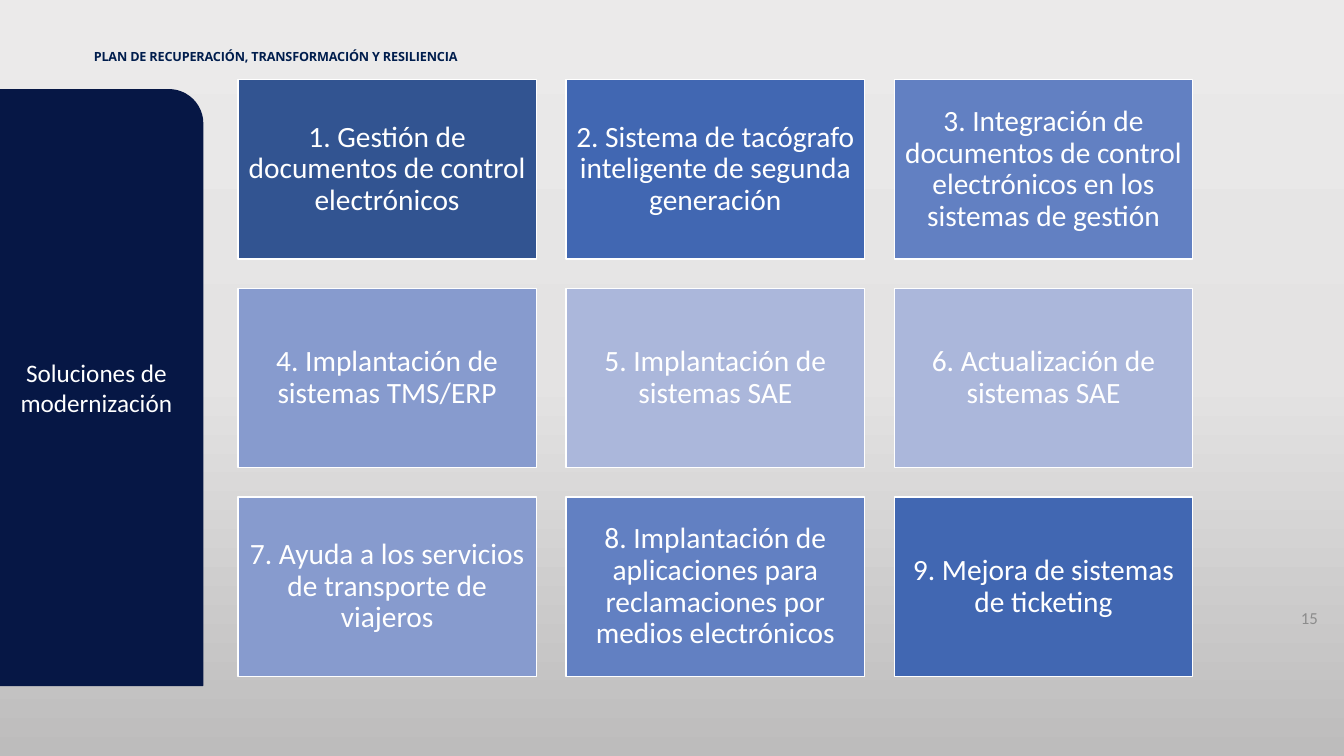
from copy import deepcopy

from pptx import Presentation
from pptx.dml.color import RGBColor
from pptx.enum.shapes import MSO_SHAPE
from pptx.enum.text import MSO_ANCHOR, MSO_AUTO_SIZE, PP_ALIGN
from pptx.oxml.ns import qn
from pptx.util import Inches, Pt

RECTANGLE = MSO_SHAPE.RECTANGLE
ROUND_CORNER = MSO_SHAPE.ROUND_1_RECTANGLE
LEFT, CENTER, RIGHT = PP_ALIGN.LEFT, PP_ALIGN.CENTER, PP_ALIGN.RIGHT
TOP, MIDDLE = MSO_ANCHOR.TOP, MSO_ANCHOR.MIDDLE
NO_AUTOFIT = MSO_AUTO_SIZE.NONE

WHITE = RGBColor(0xFF, 0xFF, 0xFF)
NAVY = RGBColor(0x06, 0x17, 0x45)
HEADER_BLUE = RGBColor(0x00, 0x1D, 0x4D)
NUMBER_GRAY = RGBColor(0x8C, 0x8C, 0x8C)
BLUE_1 = RGBColor(0x32, 0x54, 0x91)
BLUE_2 = RGBColor(0x41, 0x67, 0xB2)
BLUE_3 = RGBColor(0x62, 0x80, 0xC2)
BLUE_4 = RGBColor(0x87, 0x9B, 0xCE)
BLUE_5 = RGBColor(0xAB, 0xB7, 0xDB)
BACKGROUND_STOPS = [
    (0, RGBColor(0xEB, 0xEA, 0xEA)),
    (0.5, RGBColor(0xE4, 0xE3, 0xE3)),
    (1, RGBColor(0xBD, 0xBC, 0xBC)),
]

SOLUTIONS = [
    ("1. Gestión de documentos de control electrónicos", BLUE_1),
    ("2. Sistema de tacógrafo inteligente de segunda generación", BLUE_2),
    ("3. Integración de documentos de control electrónicos en los "
     "sistemas de gestión", BLUE_3),
    ("4. Implantación de sistemas TMS/ERP", BLUE_4),
    ("5. Implantación de sistemas SAE", BLUE_5),
    ("6. Actualización de sistemas SAE", BLUE_5),
    ("7. Ayuda a los servicios de transporte de viajeros", BLUE_4),
    ("8. Implantación de aplicaciones para reclamaciones por medios "
     "electrónicos", BLUE_3),
    ("9. Mejora de sistemas de ticketing", BLUE_2),
]
COLUMNS = 3
GRID_LEFT, GRID_TOP = 2.36, 0.79
TILE_WIDTH, TILE_HEIGHT = 2.96, 1.78
COLUMN_STEP, ROW_STEP = 3.255, 2.07


def set_background(slide):
    fill = slide.background.fill
    fill.gradient()
    fill.gradient_angle = 270
    stop_list = slide.element.find(".//" + qn("a:gsLst"))
    stop_list.append(deepcopy(stop_list[-1]))
    for stop, (position, color) in zip(fill.gradient_stops, BACKGROUND_STOPS):
        stop.position = position
        stop.color.rgb = color


def set_text(shape, text, size, color, alignment=CENTER, anchor=MIDDLE,
             font_name="Calibri", bold=False):
    frame = shape.text_frame
    frame.text = text
    frame.word_wrap = True
    frame.auto_size = NO_AUTOFIT
    frame.vertical_anchor = anchor
    paragraph = frame.paragraphs[0]
    paragraph.alignment = alignment
    font = paragraph.runs[0].font
    font.name = font_name
    font.size = Pt(size)
    font.bold = bold
    font.color.rgb = color
    return frame


def set_margins(frame, side, top, bottom):
    frame.margin_left = frame.margin_right = Inches(side)
    frame.margin_top, frame.margin_bottom = Inches(top), Inches(bottom)


def add_header(slide):
    title = slide.shapes.title
    title.left, title.top = Inches(0.92), Inches(0.48)
    title.width, title.height = Inches(4.41), Inches(0.17)
    frame = set_text(title, "PLAN DE RECUPERACIÓN, TRANSFORMACIÓN Y RESILIENCIA",
                     9, HEADER_BLUE, LEFT, TOP, "Open Sans", True)
    set_margins(frame, 0.01, 0.01, 0)
    # Slightly tightened letter spacing, in hundredths of a point
    frame.paragraphs[0].runs[0].font._element.set("spc", "-10")


def add_panel(slide, kind, left, top, width, height, fill, line, text, size):
    shape = slide.shapes.add_shape(
        kind, Inches(left), Inches(top), Inches(width), Inches(height))
    shape.shadow.inherit = False
    shape.fill.solid()
    shape.fill.fore_color.rgb = fill
    shape.line.color.rgb = line
    shape.line.width = Pt(1)
    return set_text(shape, text, size, WHITE)


def add_solution_grid(slide):
    for index, (text, color) in enumerate(SOLUTIONS):
        row, column = divmod(index, COLUMNS)
        frame = add_panel(
            slide, RECTANGLE,
            GRID_LEFT + column * COLUMN_STEP, GRID_TOP + row * ROW_STEP,
            TILE_WIDTH, TILE_HEIGHT, color, WHITE, text, 21)
        set_margins(frame, 0.09, 0.09, 0.09)
        frame.paragraphs[0].line_spacing = 0.9


def add_slide_number(slide):
    box = slide.shapes.add_textbox(
        Inches(10.17), Inches(5.93), Inches(3), Inches(0.4))
    set_text(box, "15", 12, NUMBER_GRAY, RIGHT)


def main():
    presentation = Presentation()
    presentation.slide_width = Inches(13.33)
    presentation.slide_height = Inches(7.5)
    title_only = presentation.slide_layouts.get_by_name("Title Only")
    slide = presentation.slides.add_slide(title_only)

    # Background and header
    set_background(slide)
    add_header(slide)
    add_slide_number(slide)

    # Side panel and grid of solutions
    add_panel(slide, ROUND_CORNER, 0, 0.89, 2.01, 5.91, NAVY, NAVY,
              "Soluciones de modernización", 18)
    add_solution_grid(slide)

    presentation.save("out.pptx")


if __name__ == "__main__":
    main()
